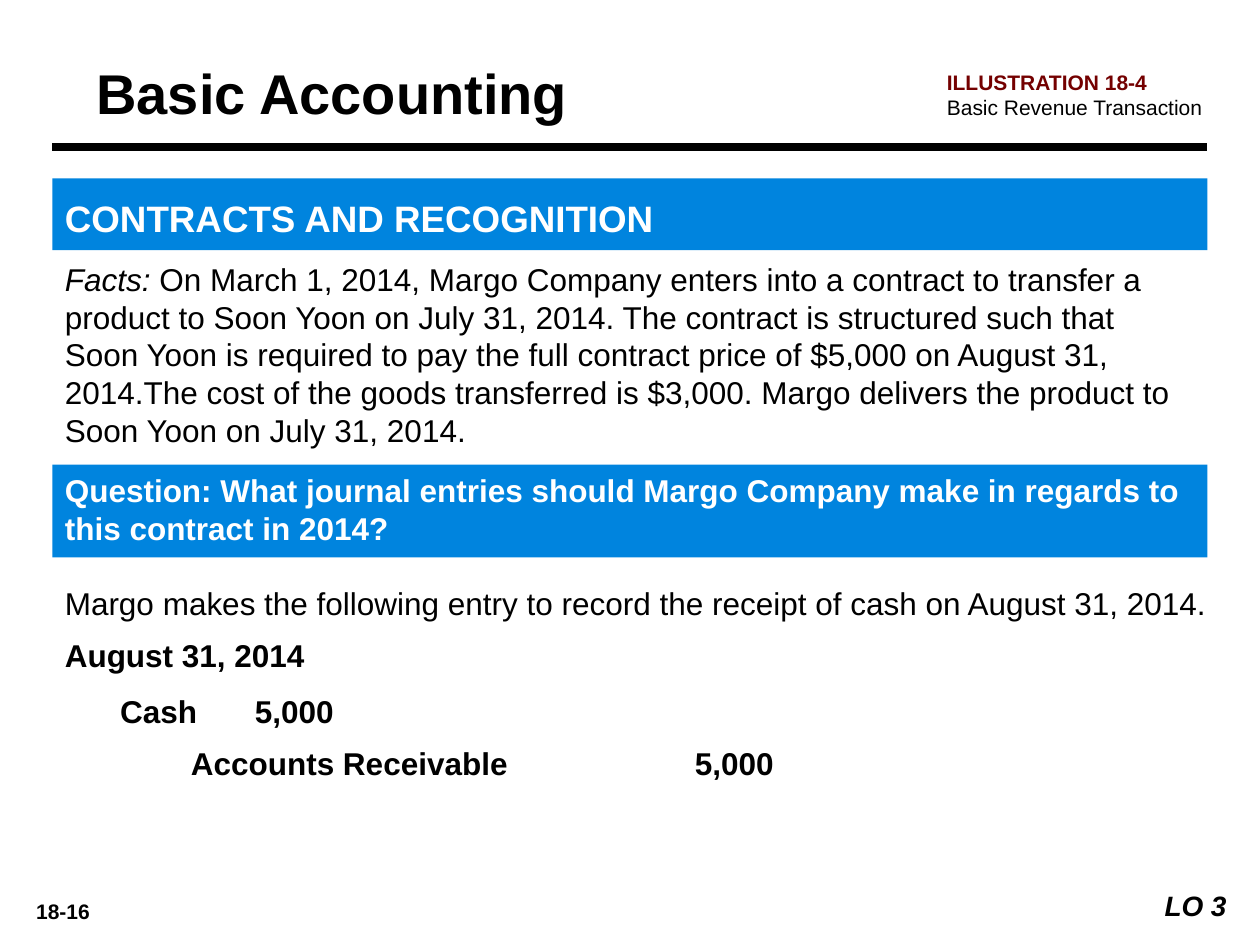
"""Build the Basic Accounting slide on a revenue contract and its journal entry."""
from pptx import Presentation
from pptx.dml.color import RGBColor
from pptx.enum.shapes import MSO_CONNECTOR as Connector, MSO_SHAPE as Shape
from pptx.enum.text import MSO_ANCHOR as Anchor, MSO_AUTO_SIZE as AutoSize, PP_ALIGN as Align
from pptx.oxml.ns import qn
from pptx.util import Pt
from lxml.etree import SubElement

COLORS = {"black": "000000", "white": "FFFFFF", "blue": "0084DE", "maroon": "740000"}
FONT = "Arial"
LEFT, WIDTH = 30, 660
RULE_Y = 84

FACTS = (
    "On March 1, 2014, Margo Company enters into a contract to transfer a product to "
    "Soon Yoon on July 31, 2014. The contract is structured such that Soon Yoon is required "
    "to pay the full contract price of $5,000 on August 31, 2014.The cost of the goods "
    "transferred is $3,000. Margo delivers the product to Soon Yoon on July 31, 2014."
)
QUESTION = "Question: What journal entries should Margo Company make in regards to this contract in 2014?"
ANSWER = "Margo makes the following entry to record the receipt of cash on August 31, 2014."

BOLD, ITALIC = {"bold": True}, {"italic": True}
ENTRY = {"spacing": 1.1, "before": 6}
BLOCKS = [
    {"at": (6, 510, 60, 21.5), "size": 12, "align": Align.CENTER, "lines": [[("18-16", BOLD)]]},
    {"at": (642, 504, 66, 26.5), "size": 16, "fill": "white", "align": Align.RIGHT,
     "lines": [[("LO 3", BOLD | ITALIC)]]},
    {"at": (LEFT, 102, WIDTH, 41), "size": 21, "fill": "blue", "color": "white", "bottom": 5.76,
     "spacing": 1.25, "before": 12, "lines": [[("CONTRACTS AND RECOGNITION", BOLD)]]},
    {"at": (LEFT, 390, WIDTH, 61), "size": 18, "indents": [(36.5, -5), (72, -35.5)], **ENTRY,
     "lines": [[("Cash\t5,000", BOLD)], [("\tAccounts Receivable\t\t5,000", BOLD)]]},
    {"at": (48, 30, 330, 44), "size": 32, "lines": [[("Basic Accounting", BOLD)]]},
    {"at": (534, 36, 162, 36), "size": 12,
     "lines": [[("ILLUSTRATION 18-4", BOLD | {"color": "maroon"})],
               [("Basic Revenue Transaction", {})]]},
    {"at": (LEFT, 145, WIDTH, 116.5), "size": 18, "lines": [[("Facts: ", ITALIC), (FACTS, {})]]},
    {"at": (LEFT, 265.5, WIDTH, 53), "size": 18, "fill": "blue", "color": "white", "bottom": 5.76,
     "lines": [[(QUESTION, BOLD)]]},
    {"at": (LEFT, 328, 678, 61), "size": 18, **ENTRY,
     "lines": [[(ANSWER, {})], [("August 31, 2014", BOLD)]]},
]


def rgb(name):
    return RGBColor.from_string(COLORS[name])


def add_box(slide, block):
    place = [Pt(length) for length in block["at"]]
    if "fill" not in block:
        return slide.shapes.add_textbox(*place)
    box = slide.shapes.add_shape(Shape.RECTANGLE, *place)
    box.shadow.inherit = False
    box.fill.solid()
    box.fill.fore_color.rgb = rgb(block["fill"])
    box.line.fill.background()
    return box


def add_span(para, text, style, block):
    span = para.add_run()
    span.text = text
    font = span.font
    font.name, font.size = FONT, Pt(block["size"])
    font.bold, font.italic = style.get("bold", False), style.get("italic", False)
    font.color.rgb = rgb(style.get("color", block.get("color", "black")))


def add_block(slide, block):
    frame = add_box(slide, block).text_frame
    frame.word_wrap = True
    frame.auto_size = AutoSize.SHAPE_TO_FIT_TEXT
    frame.vertical_anchor = Anchor.TOP
    frame.margin_bottom = Pt(block.get("bottom", 3.6))
    for index, line in enumerate(block["lines"]):
        para = frame.add_paragraph() if index else frame.paragraphs[0]
        para.alignment = block.get("align", Align.LEFT)
        para.line_spacing = block.get("spacing", 1.0)
        para.space_before = Pt(block.get("before", 0))
        if "indents" in block:
            margin, indent = block["indents"][index]
            properties = para._p.get_or_add_pPr()
            for name, length in (("marL", margin), ("indent", indent), ("defTabSz", 72)):
                properties.set(name, str(Pt(length)))
        for text, style in line:
            add_span(para, text, style, block)


def add_rule(slide):
    rule = slide.shapes.add_connector(
        Connector.STRAIGHT, Pt(LEFT), Pt(RULE_Y), Pt(LEFT + WIDTH), Pt(RULE_Y))
    rule.line.width = Pt(4.5)
    rule.line.color.rgb = rgb("black")
    SubElement(rule._element.spPr, qn("a:effectLst"))


def main():
    deck = Presentation()
    deck.slide_width, deck.slide_height = Pt(720), Pt(540)
    page = deck.slides.add_slide(deck.slide_layouts[6])
    add_rule(page)
    for block in BLOCKS:
        add_block(page, block)
    deck.save("out.pptx")


if __name__ == "__main__":
    main()
